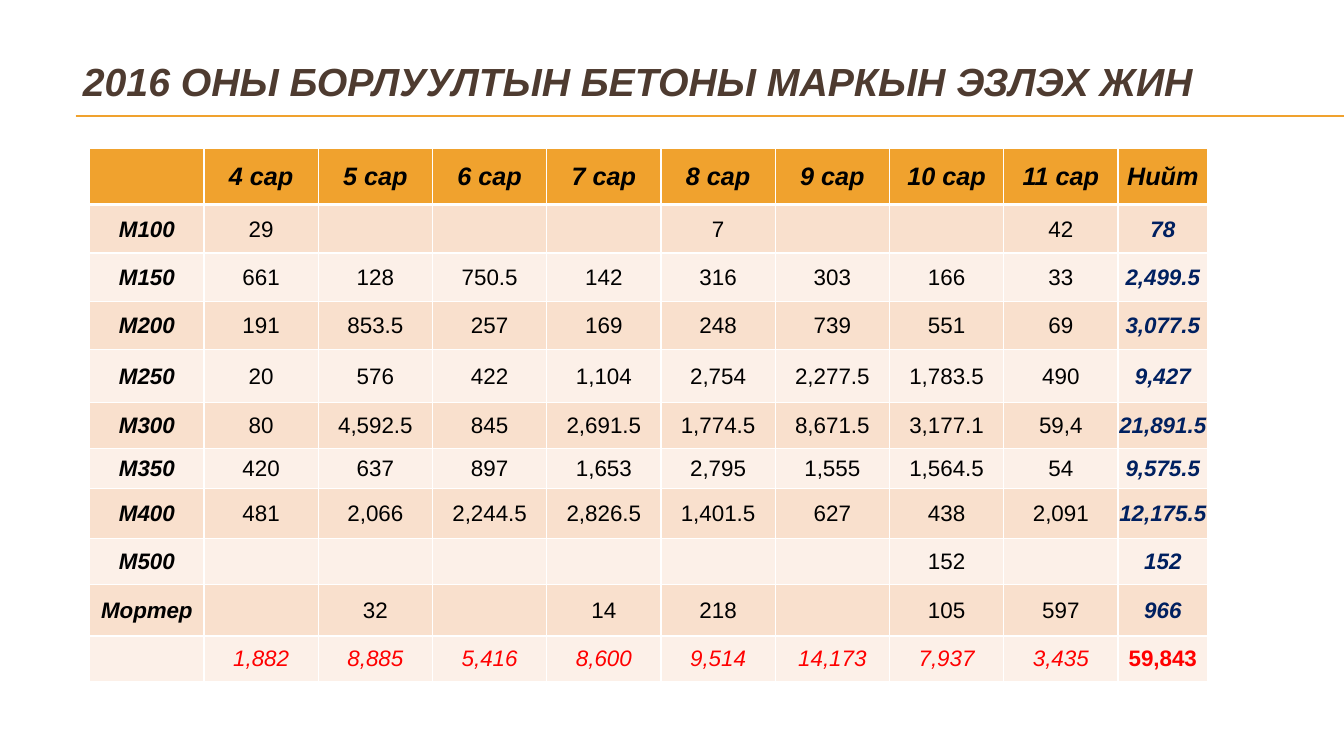
from dataclasses import dataclass

from lxml.etree import SubElement
from pptx import Presentation
from pptx.dml.color import RGBColor as RGB
from pptx.enum.shapes import MSO_CONNECTOR as Connector
from pptx.enum.text import MSO_ANCHOR as Anchor, PP_ALIGN as Align
from pptx.oxml.ns import qn
from pptx.util import Inches, Pt


@dataclass(frozen=True)
class Theme:
    font: str = "Arial"
    accent: str = "F0A22E"
    title: str = "4E3B30"
    bands: tuple[str, str] = ("F9E0CD", "FCF0E8")
    border: str = "FFFFFF"
    text: str = "000000"
    row_total: str = "002060"
    column_total: str = "FF0000"
    title_size: int = 28
    header_size: int = 18
    body_size: int = 16


@dataclass(frozen=True)
class TextStyle:
    size: int
    color: str
    bold: bool = False
    italic: bool = False


@dataclass(frozen=True)
class Rule:
    x1: float
    x2: float
    y: float


THEME = Theme()
TITLE = TextStyle(THEME.title_size, THEME.title, True, True)
HEADER = TextStyle(THEME.header_size, THEME.text, True, True)
GRADE = TextStyle(THEME.body_size, THEME.text, True, True)
VALUE = TextStyle(THEME.body_size, THEME.text)
ROW_TOTAL = TextStyle(THEME.body_size, THEME.row_total, True, True)
COLUMN_TOTAL = TextStyle(THEME.body_size, THEME.column_total, italic=True)
GRAND_TOTAL = TextStyle(THEME.body_size, THEME.column_total, bold=True)

TITLE_RULES = [Rule(0.75, 13.33, y) for y in (1.15, 1.16)]
TABLE_LEFT, TABLE_TOP, TABLE_WIDTH = 0.89, 1.47, 11.09
TOTAL_WIDTH = 0.89
ROW_HEIGHTS = [0.56, 0.48, 0.48, 0.48, 0.52, 0.46, 0.4, 0.49, 0.46, 0.51, 0.45]
SALES = [
    ["", *(f"{month} сар" for month in range(4, 12)), "Нийт"],
    ["М100", "29", "", "", "", "7", "", "", "42", "78"],
    ["М150", "661", "128", "750.5", "142", "316", "303", "166", "33", "2,499.5"],
    ["М200", "191", "853.5", "257", "169", "248", "739", "551", "69", "3,077.5"],
    ["М250", "20", "576", "422", "1,104", "2,754", "2,277.5", "1,783.5", "490", "9,427"],
    ["М300", "80", "4,592.5", "845", "2,691.5", "1,774.5", "8,671.5", "3,177.1", "59,4", "21,891.5"],
    ["М350", "420", "637", "897", "1,653", "2,795", "1,555", "1,564.5", "54", "9,575.5"],
    ["М400", "481", "2,066", "2,244.5", "2,826.5", "1,401.5", "627", "438", "2,091", "12,175.5"],
    ["М500", "", "", "", "", "", "", "152", "", "152"],
    ["Мортер", "", "32", "", "14", "218", "", "105", "597", "966"],
    ["", "1,882", "8,885", "5,416", "8,600", "9,514", "14,173", "7,937", "3,435", "59,843"],
]
LAST_ROW, LAST_COL = len(SALES) - 1, len(SALES[0]) - 1


def write(tf, text: str, style: TextStyle) -> None:
    p = tf.paragraphs[0]
    p.alignment = Align.CENTER
    if not text:
        p.font.size = Pt(style.size)
        return
    r = p.add_run()
    r.text = text
    font = {"name": THEME.font, "size": Pt(style.size),
            "bold": style.bold, "italic": style.italic}
    for name, value in font.items():
        setattr(r.font, name, value)
    r.font.color.rgb = RGB.from_string(style.color)


def add_title(s, text: str) -> None:
    title = s.shapes.title
    box = {"left": 0.17, "top": 0.55, "width": 12.31, "height": 0.5}
    for name, value in box.items():
        setattr(title, name, Inches(value))
    title.text_frame.word_wrap = True
    title.text_frame.vertical_anchor = Anchor.MIDDLE
    write(title.text_frame, text, TITLE)


def add_rule(s, rule: Rule) -> None:
    line = s.shapes.add_connector(Connector.STRAIGHT, Inches(rule.x1), Inches(rule.y),
                                  Inches(rule.x2), Inches(rule.y))
    line.line.color.rgb = RGB.from_string(THEME.accent)
    line.line.width = Pt(0.75)
    SubElement(line._element.spPr, qn("a:effectLst"))


def add_borders(cell, row: int) -> None:
    # The line under the header is the only thick one
    widths = {"L": 1, "R": 1, "T": 3 if row == 1 else 1, "B": 3 if row == 0 else 1}
    tc_pr = cell._tc.get_or_add_tcPr()
    for side, width in widths.items():
        ln = SubElement(tc_pr, qn(f"a:ln{side}"), w=str(Pt(width)))
        fill = SubElement(ln, qn("a:solidFill"))
        SubElement(fill, qn("a:srgbClr"), val=THEME.border)


def cell_style(row: int, col: int) -> TextStyle:
    if row == 0:
        return HEADER
    if row == LAST_ROW:
        return GRAND_TOTAL if col == LAST_COL else COLUMN_TOTAL
    return {0: GRADE, LAST_COL: ROW_TOTAL}.get(col, VALUE)


def add_sales_table(s) -> None:
    frame = s.shapes.add_table(len(SALES), len(SALES[0]), Inches(TABLE_LEFT),
                               Inches(TABLE_TOP), Inches(TABLE_WIDTH),
                               Inches(sum(ROW_HEIGHTS)))
    table = frame.table
    for col, column in enumerate(table.columns):
        month_width = (TABLE_WIDTH - TOTAL_WIDTH) / LAST_COL
        column.width = Inches(TOTAL_WIDTH if col == LAST_COL else month_width)
    layout = {"margin_left": Inches(0.01), "margin_right": Inches(0.01),
              "margin_top": Inches(0.01), "margin_bottom": 0,
              "vertical_anchor": Anchor.MIDDLE}
    for row, values in enumerate(SALES):
        table.rows[row].height = Inches(ROW_HEIGHTS[row])
        background = THEME.bands[(row - 1) % 2] if row else THEME.accent
        for col, text in enumerate(values):
            cell = table.cell(row, col)
            for name, value in layout.items():
                setattr(cell, name, value)
            add_borders(cell, row)
            cell.fill.solid()
            cell.fill.fore_color.rgb = RGB.from_string(background)
            write(cell.text_frame, text, cell_style(row, col))


def main() -> None:
    prs = Presentation()
    prs.slide_width, prs.slide_height = Inches(13.33), Inches(7.5)
    s = prs.slides.add_slide(prs.slide_layouts[5])
    # Heading and its underline
    add_title(s, "2016 ОНЫ БОРЛУУЛТЫН БЕТОНЫ МАРКЫН ЭЗЛЭХ ЖИН")
    for rule in TITLE_RULES:
        add_rule(s, rule)
    # Monthly sales by concrete grade
    add_sales_table(s)
    prs.save("out.pptx")


if __name__ == "__main__":
    main()
